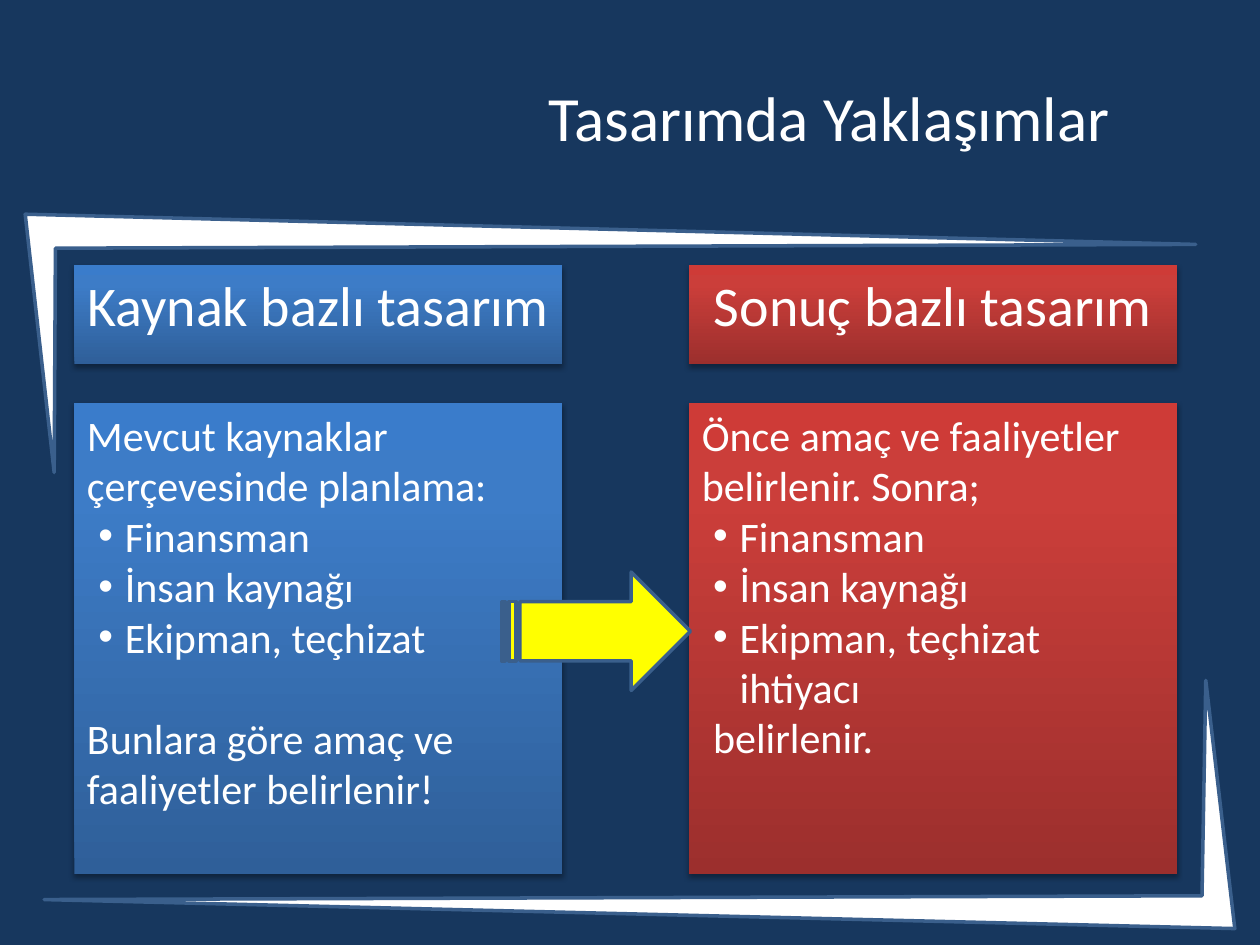
import pptx
import pptx.util
import pptx.dml.color
import pptx.enum.shapes
import pptx.enum.text
import pptx.oxml

Inches, Pt = pptx.util.Inches, pptx.util.Pt
RGB = pptx.dml.color.RGBColor.from_string
ALIGN = pptx.enum.text.PP_ALIGN
ANCHOR = pptx.enum.text.MSO_ANCHOR

THEME = {
    "font": "Calibri", "back": "17375E", "text": "FFFFFF", "frame": "FFFFFF",
    "edge": "3A5F8C", "arrow": "FFFF00",
    "title": 36, "head": 32, "body": 24,
    # Gradient stops from the bottom of a panel to its top
    "blue": [(0, "2F5F99"), (80, "3D7CC7"), (100, "3A7CCB")],
    "red": [(0, "9C2F2D"), (80, "CB3E3A"), (100, "CE3B37")],
}

TITLE = "Tasarımda Yaklaşımlar"
# Each line: (style, text)
PANELS = [
    ("blue", "Kaynak bazlı tasarım", [
        ("plain", "Mevcut kaynaklar çerçevesinde planlama:"),
        ("bullet", "Finansman"),
        ("bullet", "İnsan kaynağı"),
        ("bullet", "Ekipman, teçhizat"),
        ("apart", "Bunlara göre amaç ve faaliyetler belirlenir!"),
    ]),
    ("red", "Sonuç bazlı tasarım", [
        ("plain", "Önce amaç ve faaliyetler belirlenir. Sonra;"),
        ("bullet", "Finansman"),
        ("bullet", "İnsan kaynağı"),
        ("bullet", "Ekipman, teçhizat ihtiyacı"),
        ("hang", "belirlenir."),
    ]),
]
# Style: (left margin, first-line indent, points before, bullet)
STYLES = {
    "plain": (0, 0, 0, None),
    "bullet": (0.3, -0.21, 0, "•"),
    "hang": (0.3, -0.21, 0, None),
    "apart": (0, 0, 29, None),
}
FRAMES = [
    [(0.2, 1.7), (9.49, 1.94), (0.44, 1.97), (0.43, 3.75)],
    [(9.8, 7.37), (0.35, 7.14), (9.54, 7.11), (9.57, 5.4)],
]
LEFT, STEP, WIDTH = 0.59, 4.88, 3.87
HEAD_TOP, HEAD_HIGH = 2.1, 0.79
BODY_TOP, BODY_HIGH = 3.2, 3.74
NS = 'xmlns:a="http://schemas.openxmlformats.org/drawingml/2006/main"'


def place(shape, left, top, width, height):
    shape.left, shape.top = Inches(left), Inches(top)
    shape.width, shape.height = Inches(width), Inches(height)


def write(shape, lines, size, align, anchor):
    frame = shape.text_frame
    frame.text = "\n".join(text for _, text in lines)
    frame.word_wrap = True
    frame.auto_size = pptx.enum.text.MSO_AUTO_SIZE.NONE
    frame.vertical_anchor = anchor
    for para, (style, _) in zip(frame.paragraphs, lines):
        margin, indent, before, mark = STYLES[style]
        props = para._p.get_or_add_pPr()
        props.set("marL", str(Inches(margin)))
        props.set("indent", str(Inches(indent)))
        bullet = f'<a:buChar {NS} char="{mark}"/>' if mark else f"<a:buNone {NS}/>"
        props.append(pptx.oxml.parse_xml(bullet))
        para.alignment = align
        para.space_before = Pt(before)
        for run in para.runs:
            run.font.name, run.font.size = THEME["font"], Pt(size)
            run.font.bold = False
            run.font.color.rgb = RGB(THEME["text"])


def shade(shape, tone):
    """Give a panel its upward gradient and soft shadow."""
    stops = "".join(
        f'<a:gs pos="{pos * 1000}"><a:srgbClr val="{color}"/></a:gs>'
        for pos, color in THEME[tone])
    fill = (f'<a:gradFill {NS} rotWithShape="1"><a:gsLst>{stops}</a:gsLst>'
            '<a:lin ang="16200000" scaled="0"/></a:gradFill>')
    shadow = (f'<a:effectLst {NS}><a:outerShdw blurRad="{Pt(3.1)}" '
              f'dist="{Pt(1.8)}" dir="5400000" rotWithShape="0">'
              '<a:srgbClr val="000000"><a:alpha val="35000"/></a:srgbClr>'
              '</a:outerShdw></a:effectLst>')
    for part in (fill, shadow):
        shape._element.spPr.append(pptx.oxml.parse_xml(part))


def paint(shape, color):
    shape.shadow.inherit = False
    shape.fill.solid()
    shape.fill.fore_color.rgb = RGB(color)
    shape.line.color.rgb = RGB(THEME["edge"])
    shape.line.width = Pt(2)


def main():
    deck = pptx.Presentation()
    deck.slide_width, deck.slide_height = Inches(10), Inches(7.5)
    layout = deck.slide_layouts.get_by_name("Comparison")
    slide = deck.slides.add_slide(layout)
    slide.background.fill.solid()
    slide.background.fill.fore_color.rgb = RGB(THEME["back"])
    shapes = slide.shapes

    for points in FRAMES:
        pen = shapes.build_freeform(*map(Inches, points[0]))
        pen.add_line_segments([tuple(map(Inches, p)) for p in points[1:]])
        frame = pen.convert_to_shape()
        paint(frame, THEME["frame"])
        shapes._spTree.insert(2, frame._element)  # behind the text

    place(shapes.title, 3.66, 0.3, 5.84, 1.25)
    write(shapes.title, [("plain", TITLE)], THEME["title"],
          ALIGN.CENTER, ANCHOR.MIDDLE)

    slots = {slot.placeholder_format.idx: slot for slot in slide.placeholders}
    for col, (tone, name, lines) in enumerate(PANELS):
        left = LEFT + col * STEP
        head, body = slots[2 * col + 1], slots[2 * col + 2]
        place(head, left, HEAD_TOP, WIDTH, HEAD_HIGH)
        place(body, left, BODY_TOP, WIDTH, BODY_HIGH)
        write(head, [("plain", name)], THEME["head"], ALIGN.CENTER, ANCHOR.TOP)
        write(body, lines, THEME["body"], ALIGN.LEFT, ANCHOR.TOP)
        shade(head, tone)
        shade(body, tone)

    kind = pptx.enum.shapes.MSO_SHAPE.STRIPED_RIGHT_ARROW
    arrow = shapes.add_shape(kind, Inches(3.98), Inches(4.54),
                             Inches(1.5), Inches(0.94))
    paint(arrow, THEME["arrow"])
    deck.save("out.pptx")


if __name__ == "__main__":
    main()
